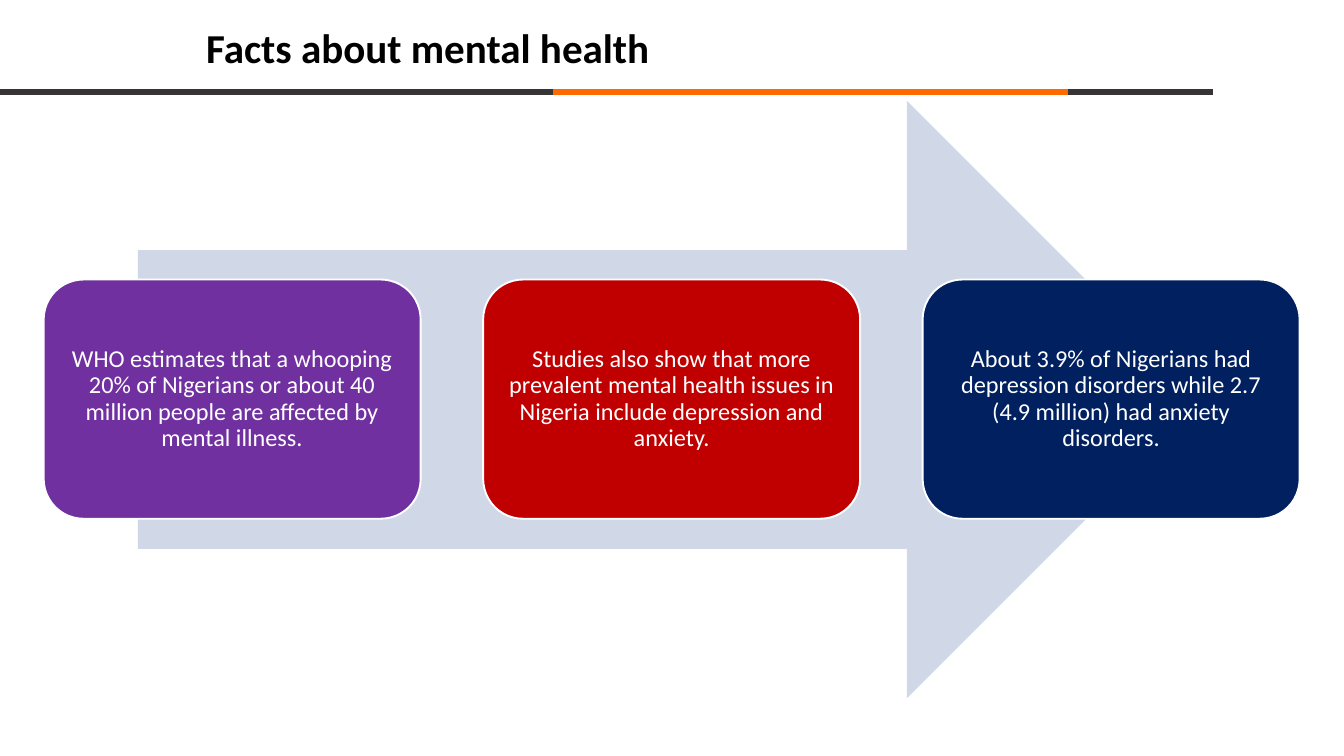
from lxml import etree
from pptx import Presentation
from pptx.dml.color import RGBColor
from pptx.enum import shapes, text
from pptx.oxml import ns
from pptx.util import Inches, Pt

FONT = "Calibri"
BLACK = RGBColor(0x00, 0x00, 0x00)
WHITE = RGBColor(0xFF, 0xFF, 0xFF)
CHARCOAL = RGBColor(0x37, 0x34, 0x35)
ORANGE = RGBColor(0xFF, 0x69, 0x00)
PALE_BLUE = RGBColor(0xD0, 0xD8, 0xE8)
PURPLE = RGBColor(0x70, 0x30, 0xA0)
RED = RGBColor(0xC0, 0x00, 0x00)
NAVY = RGBColor(0x00, 0x20, 0x60)

RULE_Y = 1.37
CARD_LEFT, CARD_TOP, CARD_WIDTH, CARD_HEIGHT = 0.65, 4.16, 5.61, 3.56
CARD_GAP = 0.93
CARD_INSET = 0.11

FACTS = [
    (PURPLE, "WHO estimates that a whooping 20% of Nigerians or about 40 "
             "million people are affected by mental illness."),
    (RED, "Studies also show that more prevalent mental health issues in "
          "Nigeria include depression and anxiety."),
    (NAVY, "About 3.9% of Nigerians had depression disorders while 2.7 "
           "(4.9 million) had anxiety disorders."),
]


def write(frame, wording, size, color, bold=False):
    """Put one centred paragraph in the middle of a text frame."""
    frame.word_wrap = True
    frame.vertical_anchor = text.MSO_ANCHOR.MIDDLE
    paragraph = frame.paragraphs[0]
    paragraph.alignment = text.PP_ALIGN.CENTER
    run = paragraph.add_run()
    run.text = wording
    run.font.name = FONT
    run.font.size = Pt(size)
    run.font.bold = bold
    run.font.color.rgb = color
    return paragraph


def add_title(slide, wording):
    title = slide.shapes.add_textbox(0, 0, Inches(12.74), Inches(1.4))
    write(title.text_frame, wording, 44, BLACK, bold=True)


def add_rule(slide, start, end, color):
    rule = slide.shapes.add_connector(
        shapes.MSO_CONNECTOR.STRAIGHT,
        Inches(start), Inches(RULE_Y), Inches(end), Inches(RULE_Y))
    rule.line.color.rgb = color
    rule.line.width = Pt(6)
    etree.SubElement(rule._element.spPr, ns.qn("a:effectLst"))


def add_block(slide, preset, left, top, width, height, color):
    """Add a filled shape with no line and no shadow."""
    block = slide.shapes.add_shape(
        preset, Inches(left), Inches(top), Inches(width), Inches(height))
    block.shadow.inherit = False
    block.fill.solid()
    block.fill.fore_color.rgb = color
    block.line.fill.background()
    return block


def add_fact_card(slide, left, color, fact):
    card = add_block(slide, shapes.MSO_SHAPE.ROUNDED_RECTANGLE,
                     left, CARD_TOP, CARD_WIDTH, CARD_HEIGHT, color)
    card.line.color.rgb = WHITE
    card.line.width = Pt(2)
    frame = card.text_frame
    frame.margin_left = frame.margin_right = Inches(CARD_INSET)
    frame.margin_top = frame.margin_bottom = Inches(CARD_INSET)
    write(frame, fact, 26, WHITE).line_spacing = 0.9


def main():
    deck = Presentation()
    deck.slide_width, deck.slide_height = Inches(20), Inches(11.25)
    slide = deck.slides.add_slide(deck.slide_layouts[6])

    add_title(slide, "Facts about mental health")
    add_rule(slide, 0, 18.05, CHARCOAL)
    add_rule(slide, 8.23, 15.9, ORANGE)

    add_block(slide, shapes.MSO_SHAPE.RIGHT_ARROW,
              2.05, 1.5, 15.89, 8.89, PALE_BLUE)
    for index, (color, fact) in enumerate(FACTS):
        left = CARD_LEFT + index * (CARD_WIDTH + CARD_GAP)
        add_fact_card(slide, left, color, fact)

    deck.save("out.pptx")


if __name__ == "__main__":
    main()
